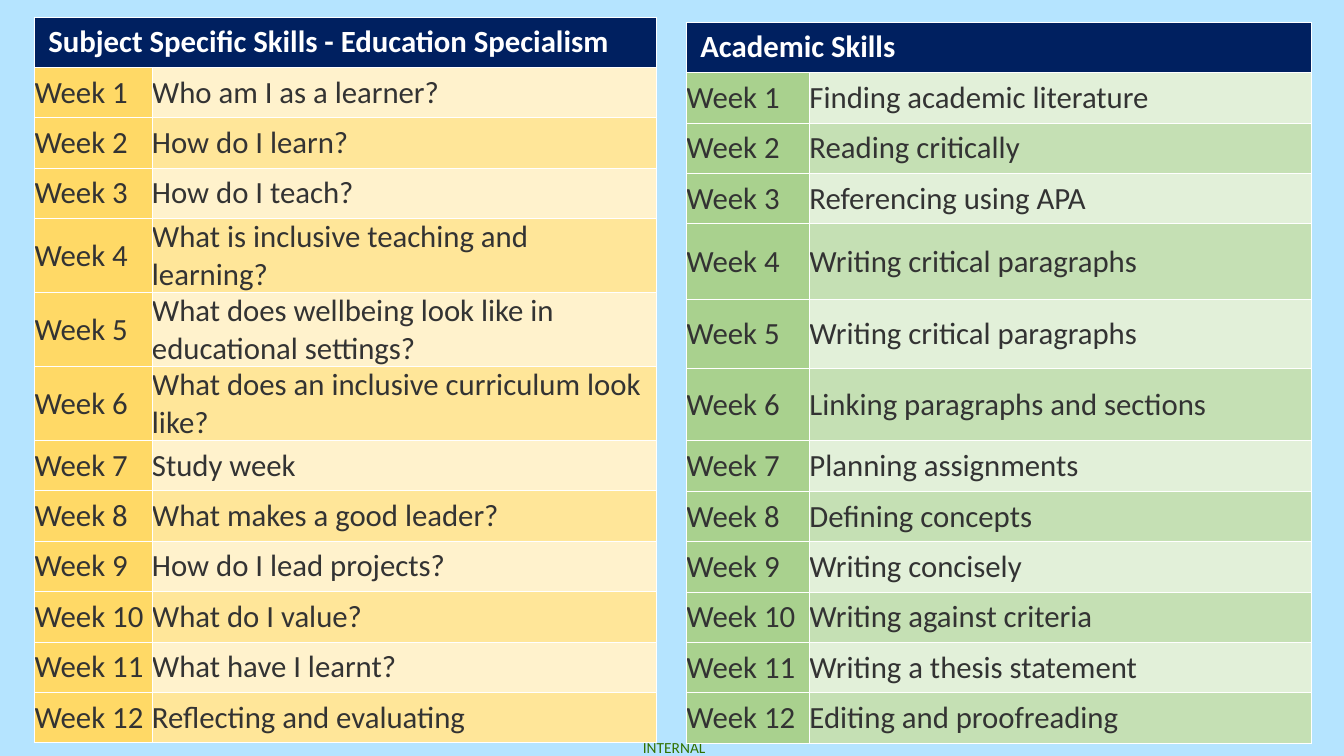
from dataclasses import dataclass

from lxml.etree import SubElement
from pptx import Presentation
from pptx.dml.color import RGBColor
from pptx.enum.text import MSO_ANCHOR, PP_ALIGN
from pptx.oxml.ns import qn
from pptx.util import Cm, Pt


@dataclass(frozen=True)
class Theme:
    font: str = "Calibri"
    table_size: float = 22
    footer_size: float = 11
    border_width: float = 0.75
    background: str = "B5E4FF"
    header: str = "002060"
    header_text: str = "FFFFFF"
    text: str = "333333"
    border: str = "FFFFFF"
    footer: str = "317100"
    # Week column, odd weeks, even weeks
    gold: tuple = ("FFD966", "FFF2CC", "FFE699")
    green: tuple = ("A9D18E", "E2F0D9", "C5E0B4")


THEME = Theme()
ROW = 1.27

SUBJECT_TOPICS = [
    "Who am I as a learner?",
    "How do I learn?",
    "How do I teach?",
    "What is inclusive teaching and learning?",
    "What does wellbeing look like in educational settings?",
    "What does an inclusive curriculum look like?",
    "Study week",
    "What makes a good leader?",
    "How do I lead projects?",
    "What do I value?",
    "What have I learnt?",
    "Reflecting and evaluating",
]
ACADEMIC_TOPICS = [
    "Finding academic literature",
    "Reading critically",
    "Referencing using APA",
    "Writing critical paragraphs",
    "Writing critical paragraphs",
    "Linking paragraphs and sections",
    "Planning assignments",
    "Defining concepts",
    "Writing concisely",
    "Writing against criteria",
    "Writing a thesis statement",
    "Editing and proofreading",
]


def add_run(paragraph, text, size, color, bold=False):
    run = paragraph.add_run()
    run.text = text
    run.font.name = THEME.font
    run.font.size = Pt(size)
    run.font.bold = bold
    run.font.color.rgb = RGBColor.from_string(color)


def format_cell(cell, fill, left=0, right=0):
    cell.margin_left, cell.margin_right = Cm(left), Cm(right)
    cell.margin_top = cell.margin_bottom = 0
    cell.vertical_anchor = MSO_ANCHOR.MIDDLE
    # Borders come before the fill in the cell properties
    properties = cell._tc.get_or_add_tcPr()
    for side in ("a:lnL", "a:lnR", "a:lnT", "a:lnB"):
        line = SubElement(properties, qn(side), w=str(Pt(THEME.border_width)))
        line_fill = SubElement(line, qn("a:solidFill"))
        SubElement(line_fill, qn("a:srgbClr"), val=THEME.border)
    cell.fill.solid()
    cell.fill.fore_color.rgb = RGBColor.from_string(fill)


def add_schedule(slide, box, week_width, title, topics, colors, tall_rows):
    """Header row plus one row per week; tall_rows maps a week to its height."""
    left, top, width = box
    heights = [ROW] + [tall_rows.get(week, ROW) for week in range(1, len(topics) + 1)]
    frame = slide.shapes.add_table(
        len(heights), 2, Cm(left), Cm(top), Cm(width), Cm(sum(heights)))
    table = frame.table
    table.columns[0].width = Cm(week_width)
    table.columns[1].width = Cm(width - week_width)
    for row, height in zip(table.rows, heights):
        row.height = Cm(height)

    # Header
    for column in range(2):
        format_cell(table.cell(0, column), THEME.header, left=0.35)
    table.cell(0, 0).merge(table.cell(0, 1))
    add_run(table.cell(0, 0).text_frame.paragraphs[0], title,
            THEME.table_size, THEME.header_text, bold=True)

    # Weeks
    week_fill, *bands = colors
    for week, topic in enumerate(topics, start=1):
        entries = [(f"Week {week}", week_fill, 0), (topic, bands[(week - 1) % 2], 0.3)]
        for column, (text, fill, right) in enumerate(entries):
            cell = table.cell(week, column)
            format_cell(cell, fill, right=right)
            add_run(cell.text_frame.paragraphs[0], text, THEME.table_size, THEME.text)


def add_footer(slide, box):
    text_box = slide.shapes.add_textbox(*(Cm(length) for length in box))
    frame = text_box.text_frame
    frame.word_wrap = False
    frame.margin_left = frame.margin_right = frame.margin_top = frame.margin_bottom = 0
    paragraph = frame.paragraphs[0]
    paragraph.alignment = PP_ALIGN.CENTER
    add_run(paragraph, "INTERNAL", THEME.footer_size, THEME.footer)


def main():
    presentation = Presentation()
    presentation.slide_width, presentation.slide_height = Cm(33.87), Cm(19.05)
    slide = presentation.slides.add_slide(presentation.slide_layouts[6])
    background = slide.background.fill
    background.solid()
    background.fore_color.rgb = RGBColor.from_string(THEME.background)

    # The footer lies behind the tables
    add_footer(slide, (16.15, 18.59, 1.68, 0.46))
    add_schedule(slide, (0.87, 0.43, 15.67), 2.96,
                 "Subject Specific Skills - Education Specialism",
                 SUBJECT_TOPICS, THEME.gold, {4: 1.86, 5: 1.86, 6: 1.86})
    add_schedule(slide, (17.3, 0.56, 15.75), 3.1,
                 "Academic Skills",
                 ACADEMIC_TOPICS, THEME.green, {4: 1.91, 5: 1.73, 6: 1.83})

    presentation.save("out.pptx")


if __name__ == "__main__":
    main()
